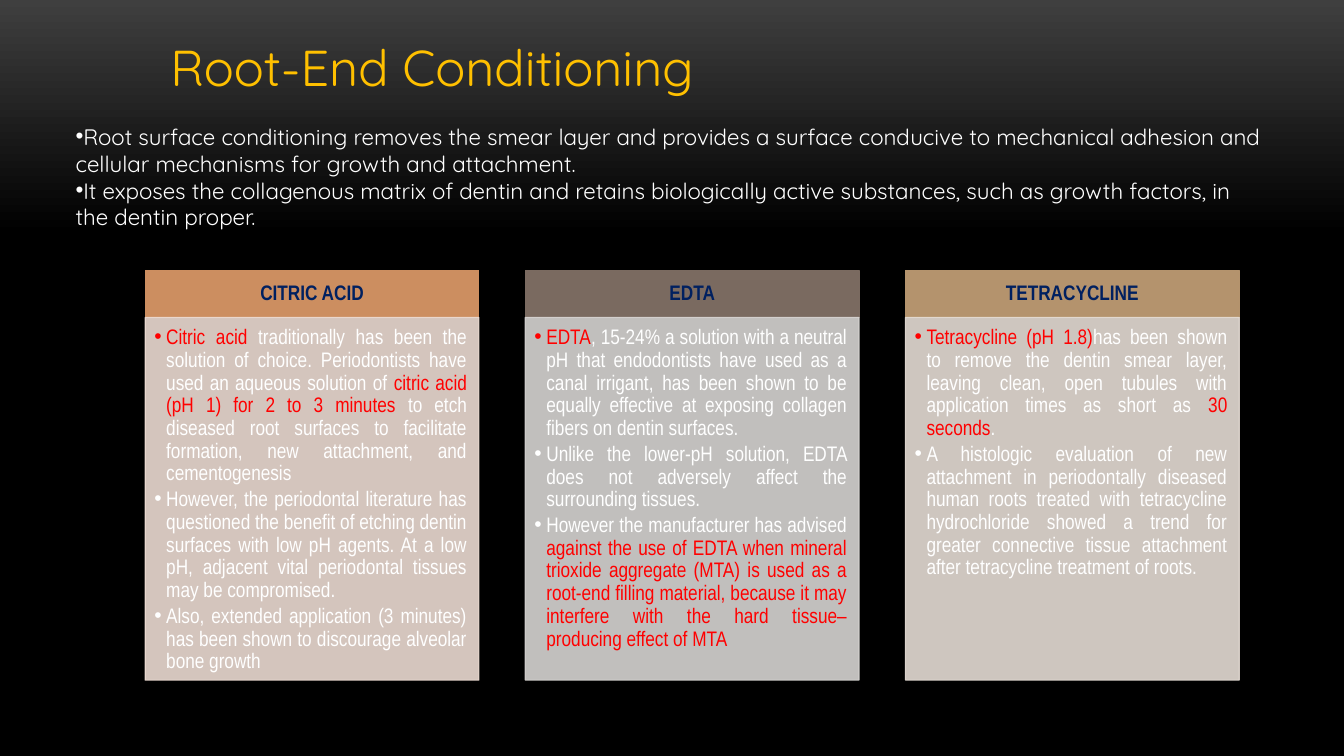
from pptx import Presentation
from pptx.dml.color import RGBColor
from pptx.enum.shapes import MSO_SHAPE
from pptx.enum.text import MSO_ANCHOR, MSO_AUTO_SIZE, PP_ALIGN
from pptx.oxml.ns import qn
from pptx.util import Cm, Pt
from lxml.etree import SubElement


def paint(hue):
    return RGBColor.from_string(hue)


def write(par, text, look, hues, indent=None):
    """Fill a paragraph; pieces between bars take the two hues in turn."""
    if indent is not None:
        props = par._p.get_or_add_pPr()
        props.set("marL", str(Cm(indent)))
        props.set("indent", str(-Cm(indent)))
        SubElement(props, qn("a:buFont")).set("typeface", "Arial")
        SubElement(props, qn("a:buChar")).set("char", "•")
    for i, piece in enumerate(text.split("|")):
        if piece:
            run = par.add_run()
            run.text = piece
            for key, value in look.items():
                setattr(run.font, key, value)
            run.font.color.rgb = paint(hues[i % 2])


WHITE, RED, NAVY, GOLD = "FFFFFF", "FF0000", "002060", "FFC000"
TITLE = {"name": "Quicksand", "size": Pt(36)}
INTRO = {"name": "Quicksand", "size": Pt(16)}
CARD = {"name": "Arial Narrow", "size": Pt(15)}
HEAD = {**CARD, "bold": True}

deck = Presentation()
deck.slide_width, deck.slide_height = Cm(33.87), Cm(19.05)
slide = deck.slides.add_slide(deck.slide_layouts[1])

# Background: dark grey fading down to black
back = slide.background.fill
back.gradient()
back.gradient_angle = 270
for stop, (place, hue) in zip(back.gradient_stops, [(0, "3F3F3F"), (0.31, "000000")]):
    stop.position = place
    stop.color.rgb = paint(hue)

# Title and intro
title, intro = slide.shapes.title, slide.placeholders[1]
frames = [(title, (4.04, 0.79, 14.5, 1.8)), (intro, (1.65, 2.97, 30.56, 3))]
for holder, box in frames:
    holder.left, holder.top, holder.width, holder.height = map(Cm, box)
    holder.text_frame.auto_size = MSO_AUTO_SIZE.NONE
    holder.text_frame.vertical_anchor = MSO_ANCHOR.TOP
title.text_frame.word_wrap = False
head = title.text_frame.paragraphs[0]
head.alignment = PP_ALIGN.LEFT
write(head, "Root-End Conditioning", TITLE, [GOLD])

points = [
    "Root surface conditioning removes the smear layer and provides a surface conducive to mechanical adhesion and cellular mechanisms for growth and attachment.",
    "It exposes the collagenous matrix of dentin and retains biologically active substances, such as growth factors, in the dentin proper.",
]
for i, point in enumerate(points):
    par = intro.text_frame.add_paragraph() if i else intro.text_frame.paragraphs[0]
    par.space_before = Pt(0)
    write(par, point, INTRO, [WHITE], 0)

# Three cards: name, header fill, body fill, points (red between bars)
cards = [
    ("CITRIC ACID", "CC8E60", "ECDBD2", [
        "|Citric acid |traditionally has been the solution of choice. Periodontists have used an aqueous solution of |citric acid (pH 1) for 2 to 3 minutes |to etch diseased root surfaces to facilitate formation, new attachment, and cementogenesis",
        "However, the periodontal literature has questioned the benefit of etching dentin surfaces with low pH agents. At a low pH, adjacent vital periodontal tissues may be compromised.",
        "Also, extended application (3 minutes) has been shown to discourage alveolar bone growth",
    ]),
    ("EDTA", "7A6A60", "D7D4D2", [
        "|EDTA|, 15-24% a solution with a neutral pH that endodontists have used as a canal irrigant, has been shown to be equally effective at exposing collagen fibers on dentin surfaces.",
        "Unlike the lower-pH solution, EDTA does not adversely affect the surrounding tissues.",
        "However the manufacturer has advised |against the use of EDTA when mineral trioxide aggregate (MTA) is used as a root-end filling material, because it may interfere with the hard tissue–producing effect of MTA",
    ]),
    ("TETRACYCLINE", "B4936D", "E5DCD4", [
        "|Tetracycline (pH 1.8)|has been shown to remove the dentin smear layer, leaving clean, open tubules with application times as short as |30 seconds|.",
        "A histologic evaluation of new attachment in periodontally diseased human roots treated with tetracycline hydrochloride showed a trend for greater connective tissue attachment after tetracycline treatment of roots.",
    ]),
]
for col, (name, dark, pale, notes) in enumerate(cards):
    left = 3.66 + 9.58 * col
    parts = [
        (6.81, 1.19, dark, [name], (0.3, 0.18, 0.3, 0.18), MSO_ANCHOR.MIDDLE),
        (8, 9.14, pale, notes, (0.23, 0.23, 0.3, 0.33), MSO_ANCHOR.TOP),
    ]
    for top, high, hue, texts, gaps, anchor in parts:
        rect = slide.shapes.add_shape(
            MSO_SHAPE.RECTANGLE, Cm(left), Cm(top), Cm(8.41), Cm(high))
        rect.shadow.inherit = False
        rect.fill.solid()
        rect.fill.fore_color.rgb = rect.line.color.rgb = paint(hue)
        rect.line.width = Pt(0.85)
        if hue == pale:
            for tint in rect._element.spPr.iter(qn("a:srgbClr")):
                SubElement(tint, qn("a:alpha")).set("val", "90000")

        frame = rect.text_frame
        frame.word_wrap = True
        frame.vertical_anchor = anchor
        for side, gap in zip(("left", "top", "right", "bottom"), gaps):
            setattr(frame, "margin_" + side, Cm(gap))
        for i, text in enumerate(texts):
            par = frame.add_paragraph() if i else frame.paragraphs[0]
            par.line_spacing = 0.9
            if hue == dark:
                par.alignment = PP_ALIGN.CENTER
                write(par, text, HEAD, [NAVY])
            else:
                par.alignment = PP_ALIGN.JUSTIFY
                par.space_after = Pt(2.25)
                write(par, text, CARD, [WHITE, RED], 0.3)

deck.save("out.pptx")
